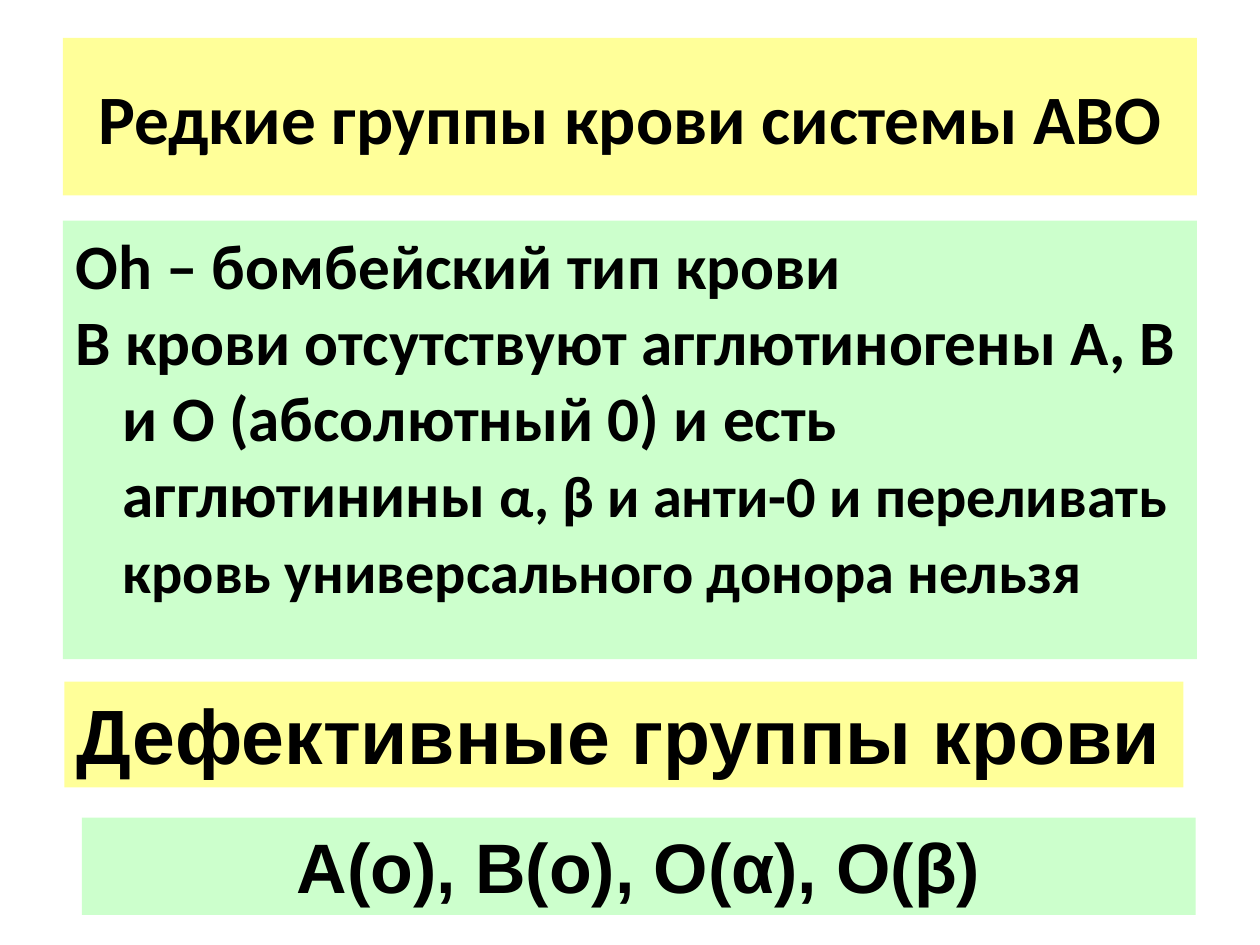
from pptx import Presentation
from pptx.dml.color import RGBColor
from pptx.enum.shapes import MSO_SHAPE
from pptx.enum.text import MSO_ANCHOR, PP_ALIGN
from pptx.util import Pt

RECTANGLE = MSO_SHAPE.RECTANGLE
TOP, MIDDLE = MSO_ANCHOR.TOP, MSO_ANCHOR.MIDDLE
LEFT, CENTER = PP_ALIGN.LEFT, PP_ALIGN.CENTER
YELLOW, GREEN, BLACK = "FFFF99", "CCFFCC", "000000"
HANGING = 27


def color(value):
    """Return the colour of a hex string."""
    return RGBColor.from_string(value)


def add_panel(page, box, fill, font, paragraphs, align=LEFT, anchor=TOP, hanging=0):
    """Place a filled panel whose paragraphs are lists of (text, size) spans."""
    panel = page.shapes.add_shape(RECTANGLE, *(Pt(length) for length in box))
    panel.shadow.inherit = False
    panel.fill.solid()
    panel.fill.fore_color.rgb = color(fill)
    panel.line.fill.background()
    frame = panel.text_frame
    frame.word_wrap = True
    frame.vertical_anchor = anchor
    for index, spans in enumerate(paragraphs):
        para = frame.add_paragraph() if index else frame.paragraphs[0]
        para.alignment = align
        if hanging:
            properties = para._p.get_or_add_pPr()
            properties.set("marL", str(Pt(hanging)))
            properties.set("indent", str(-Pt(hanging)))
        for text, size in spans:
            span = para.add_run()
            span.text = text
            span.font.color.rgb = color(BLACK)
            for name, value in {"name": font, "size": Pt(size), "bold": True}.items():
                setattr(span.font, name, value)


def add_rare_groups(page, box):
    """Place the title and the description of the rare blood type."""
    left, top, width, height = box
    title_height, gap = 90, 14.4
    body_top = title_height + gap
    add_panel(page, (left, top, width, title_height), YELLOW, "Calibri",
              [[("Редкие группы крови системы АВО", 39.6)]], CENTER, MIDDLE)
    add_panel(page, (left, top + body_top, width, height - body_top), GREEN, "Calibri", [
        [("Оh – бомбейский тип крови", 36.1)],
        [("В крови отсутствуют агглютиногены А, В и О (абсолютный 0) "
          "и есть агглютинины ", 36.1),
         ("α, β и анти-0 и переливать кровь универсального донора нельзя ", 33.3),
         (" ", 36.1)],
    ], hanging=HANGING)


def add_defective_groups(page, box):
    """Place the heading and the list of the defective blood groups."""
    left, top, width, height = box
    heading_height, list_height, list_inset = 60.5, 55.5, 13
    add_panel(page, (left, top, width - 7, heading_height), YELLOW, "Arial",
              [[("Дефективные группы крови", 44)]])
    add_panel(page, (left + list_inset - 3, top + height - list_height,
                     width - list_inset + 3, list_height), GREEN, "Arial",
              [[("А(о), В(о), О(α), О(β)", 40)]], CENTER)


def main():
    """Build and save the deck."""
    deck = Presentation()
    deck.slide_width, deck.slide_height = Pt(720), Pt(540)
    page = deck.slides.add_slide(deck.slide_layouts[6])
    add_rare_groups(page, (36, 21.6, 648, 355))
    add_defective_groups(page, (36.8, 389.5, 646.4, 133.3))
    deck.save("out.pptx")


if __name__ == "__main__":
    main()
